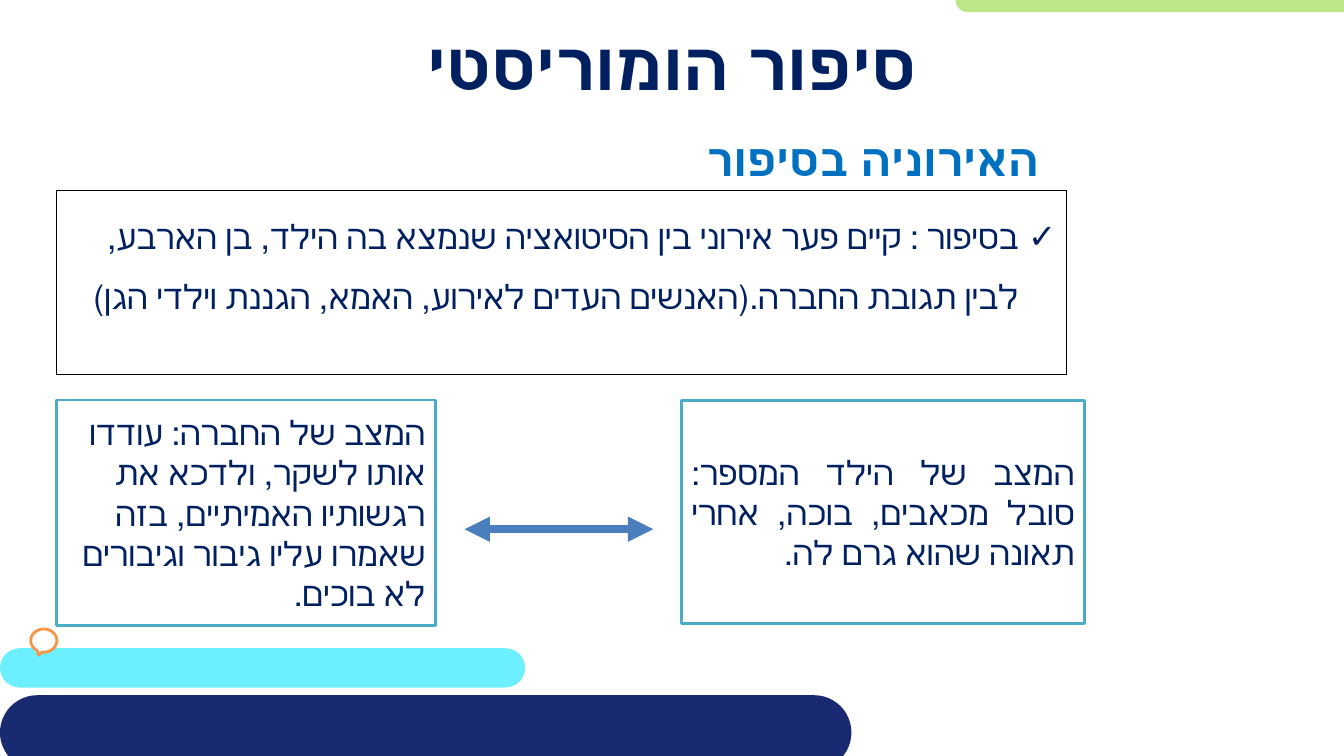
import pptx
import pptx.dml.color
import pptx.enum.shapes
import pptx.enum.text
import pptx.oxml.ns
import pptx.util
from lxml import etree
from typing import Any, NamedTuple, Optional

Pt = pptx.util.Pt
qn = pptx.oxml.ns.qn
SHAPE = pptx.enum.shapes.MSO_SHAPE
ALIGN = pptx.enum.text.PP_ALIGN
ANCHOR = pptx.enum.text.MSO_ANCHOR

NAVY = "002060"
LEFT = 40.4


class Box(NamedTuple):
    left: float
    top: float
    width: float
    height: float


class Figure(NamedTuple):
    kind: Any
    box: Box
    fill: str
    outline: Optional[str] = None


class Wording(NamedTuple):
    text: str
    size: float
    font: str = "Quicksand"
    color: str = NAVY
    bold: bool = False
    align: Any = ALIGN.RIGHT
    anchor: Any = ANCHOR.MIDDLE


BARS = [
    Figure(SHAPE.ROUNDED_RECTANGLE, Box(0, 463, 375.1, 28.1), "6CF0FF"),
    Figure(SHAPE.ROUNDED_RECTANGLE, Box(682.6, -8.6, 417.6, 17.3), "BDE686"),
    Figure(SHAPE.ROUNDED_RECTANGLE, Box(0, 496.6, 608.2, 53.3), "192A72"),
]
SITUATIONS = [
    (Figure(SHAPE.RECTANGLE, Box(486.8, 285.8, 287.8, 159.8), "FFFFFF", "4BACC6"),
     Wording("המצב של הילד המספר: סובל מכאבים, בוכה, אחרי תאונה שהוא גרם לה.",
             24, "Calibri", align=ALIGN.JUSTIFY)),
    (Figure(SHAPE.RECTANGLE, Box(LEFT, 285.8, 270.6, 161), "FFFFFF", "4BACC6"),
     Wording("המצב של החברה: עודדו אותו לשקר, ולדכא את רגשותיו האמיתיים, "
             "בזה שאמרו עליו גיבור וגיבורים לא בוכים.", 24, "Calibri")),
]
CALLOUT = Figure(SHAPE.OVAL_CALLOUT, Box(22, 449.3, 18.7, 16.6), "FFFFFF", "F79646")


def rgb(color: str) -> Any:
    return pptx.dml.color.RGBColor.from_string(color)


def place(shape: Any, box: Box) -> None:
    shape.left, shape.top, shape.width, shape.height = (Pt(v) for v in box)


def write(shape: Any, wording: Wording) -> Any:
    """Fill a shape with one right-to-left paragraph and return it."""
    frame = shape.text_frame
    frame.word_wrap = True
    frame.auto_size = pptx.enum.text.MSO_AUTO_SIZE.NONE
    frame.vertical_anchor = wording.anchor
    paragraph = frame.paragraphs[0]
    paragraph.alignment = wording.align
    paragraph.space_before = Pt(0)
    paragraph._p.get_or_add_pPr().set("rtl", "1")
    run = paragraph.add_run()
    run.text = wording.text
    run.font.size = Pt(wording.size)
    run.font.bold = wording.bold
    run.font.color.rgb = rgb(wording.color)
    run.font.name = wording.font
    return paragraph


def draw(slide: Any, figure: Figure) -> Any:
    shape = slide.shapes.add_shape(figure.kind, *(Pt(v) for v in figure.box))
    shape.shadow.inherit = False
    shape.fill.solid()
    shape.fill.fore_color.rgb = rgb(figure.fill)
    if figure.outline:
        shape.line.color.rgb = rgb(figure.outline)
        shape.line.width = Pt(2)
    else:
        shape.line.fill.background()
    if figure.kind == SHAPE.ROUNDED_RECTANGLE:
        shape.adjustments[0] = 0.5
    return shape


def draw_double_arrow(slide: Any, start: float, end: float, y: float) -> None:
    arrow = slide.shapes.add_connector(
        pptx.enum.shapes.MSO_CONNECTOR.STRAIGHT, Pt(start), Pt(y), Pt(end), Pt(y))
    arrow.line.color.rgb = rgb("4B7EBC")
    arrow.line.width = Pt(6)
    outline = arrow.line._get_or_add_ln()
    for tip in ("a:headEnd", "a:tailEnd"):
        etree.SubElement(outline, qn(tip), type="triangle")
    etree.SubElement(arrow._element.spPr, qn("a:effectLst"))


def main() -> None:
    deck = pptx.Presentation()
    deck.slide_width, deck.slide_height = Pt(960), Pt(540)
    # Layout with a title, a bulleted body and a caption text
    slide = deck.slides.add_slide(deck.slide_layouts[7])
    title = slide.shapes.title
    explanation, heading = slide.placeholders[1], slide.placeholders[2]

    # Coloured bars
    for bar in BARS:
        draw(slide, bar)

    # Title and heading
    place(title, Box(LEFT, 17, 879, 56.9))
    write(title, Wording("סיפור הומוריסטי", 48, bold=True, align=ALIGN.CENTER))
    place(heading, Box(LEFT, 93.6, 709, 42.5))
    write(heading, Wording("האירוניה בסיפור", 32, color="0070C0", bold=True,
                           anchor=ANCHOR.BOTTOM))

    # Framed explanation with a check mark
    place(explanation, Box(LEFT, 136.1, 721.3, 131.4))
    explanation.line.color.rgb = rgb("000000")
    explanation.line.width = Pt(0.75)
    item = write(explanation, Wording(
        "בסיפור : קיים פער אירוני בין הסיטואציה שנמצא בה הילד, בן הארבע, "
        "לבין תגובת החברה.(האנשים העדים לאירוע, האמא, הגננת וילדי הגן)",
        24, anchor=ANCHOR.TOP))
    item.line_spacing = 1.5
    item.space_after = Pt(6)
    properties = item._p.get_or_add_pPr()
    properties.set("marL", str(Pt(27)))
    properties.set("indent", str(Pt(-27)))
    etree.SubElement(properties, qn("a:buFont"), typeface="Quicksand")
    etree.SubElement(properties, qn("a:buChar"), char="✓")

    # The two situations and the gap between them
    for figure, wording in SITUATIONS:
        write(draw(slide, figure), wording)
    draw_double_arrow(slide, 331.9, 466.6, 378)
    draw(slide, CALLOUT)

    deck.save("out.pptx")


if __name__ == "__main__":
    main()
